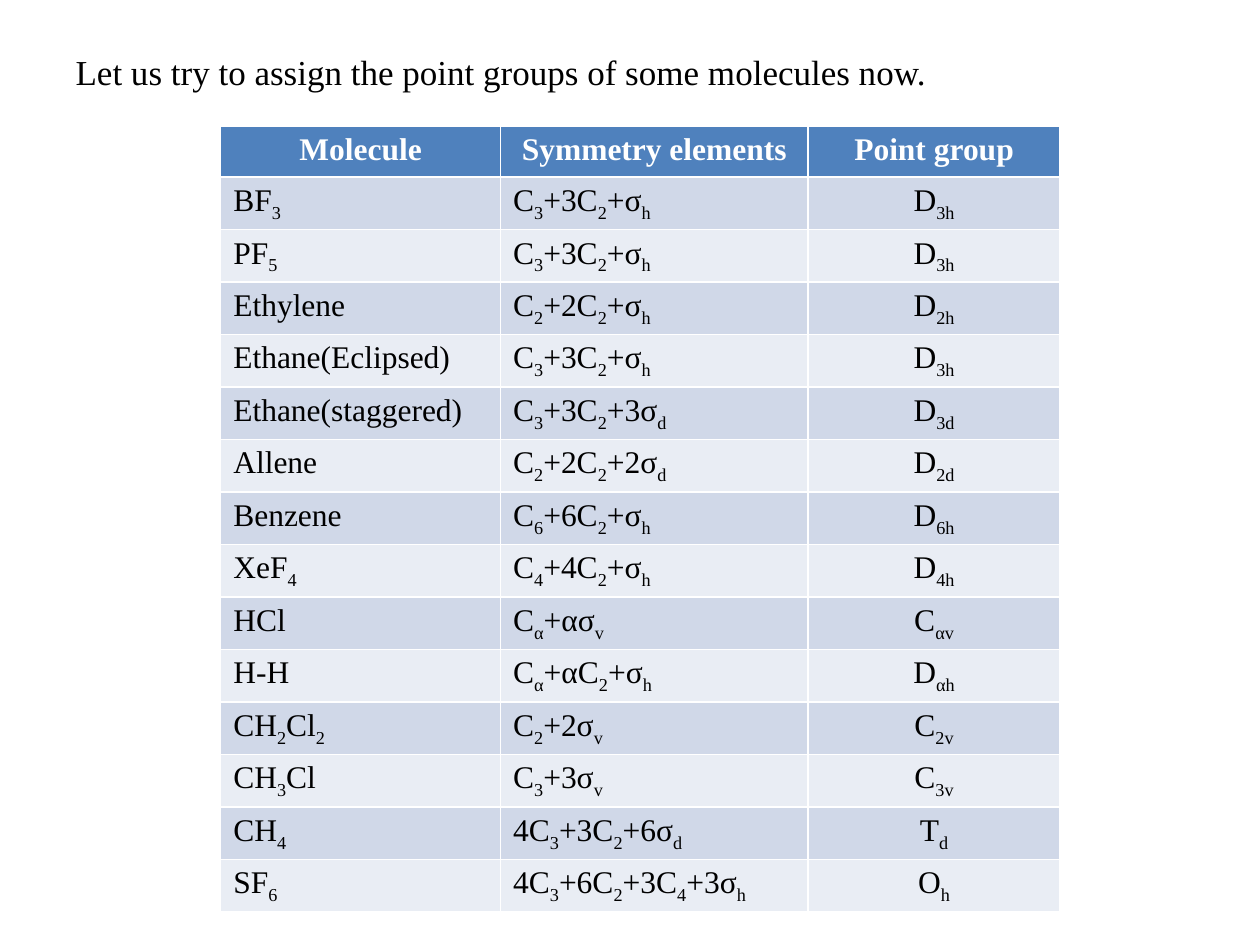
"""Build a slide with a table of molecules and their point groups."""
from pptx import Presentation
from pptx.dml.color import RGBColor
from pptx.enum.text import MSO_ANCHOR, MSO_AUTO_SIZE, PP_ALIGN
from pptx.util import Cm, Pt

LEFT, CENTER = PP_ALIGN.LEFT, PP_ALIGN.CENTER
MIDDLE = MSO_ANCHOR.MIDDLE
NO_FIT = MSO_AUTO_SIZE.NONE
TITLE_ONLY = 5

HEADERS = ["Molecule", "Symmetry elements", "Point group"]
MOLECULES = [
    ("BF_3", "C_3_+3C_2_+σ_h", "D_3h"),
    ("PF_5", "C_3_+3C_2_+σ_h", "D_3h"),
    ("Ethylene", "C_2_+2C_2_+σ_h", "D_2h"),
    ("Ethane(Eclipsed)", "C_3_+3C_2_+σ_h", "D_3h"),
    ("Ethane(staggered)", "C_3_+3C_2_+3σ_d", "D_3d"),
    ("Allene", "C_2_+2C_2_+2σ_d", "D_2d"),
    ("Benzene", "C_6_+6C_2_+σ_h", "D_6h"),
    ("XeF_4", "C_4_+4C_2_+σ_h", "D_4h"),
    ("HCl", "C_α_+ασ_v", "C_αv"),
    ("H-H", "C_α_+αC_2_+σ_h", "D_αh"),
    ("CH_2_Cl_2", "C_2_+2σ_v", "C_2v"),
    ("CH_3_Cl", "C_3_+3σ_v", "C_3v"),
    ("CH_4", "4C_3_+3C_2_+6σ_d", "T_d"),
    ("SF_6", "4C_3_+6C_2_+3C_4_+3σ_h", "O_h"),
]


def rgb(color):
    return RGBColor.from_string(color)


class Deck:
    font = "Times New Roman"
    text, header_text = "000000", "FFFFFF"
    header_fill = "4F81BD"
    bands = ("E9EDF4", "D0D8E8")

    def __init__(self, prs):
        self.s = prs.slides.add_slide(prs.slide_layouts[TITLE_ONLY])

    def style(self, r, size, color, bold=False):
        r.font.name = self.font
        r.font.size = Pt(size)
        r.font.bold = bold
        r.font.color.rgb = rgb(color)

    def title(self, text, left, top, width, height):
        sp = self.s.shapes.title
        sp.left, sp.top, sp.width, sp.height = left, top, width, height
        tf = sp.text_frame
        tf.text = text
        tf.auto_size = NO_FIT
        tf.vertical_anchor = MIDDLE
        p = tf.paragraphs[0]
        p.alignment = LEFT
        self.style(p.runs[0], 20, self.text)

    def cell(self, cell, formula, fill, color, align, bold):
        cell.fill.solid()
        cell.fill.fore_color.rgb = rgb(fill)
        p = cell.text_frame.paragraphs[0]
        p.alignment = align
        for i, part in enumerate(formula.split("_")):
            r = p.add_run()
            r.text = part
            self.style(r, 18, color, bold)
            if i % 2:
                r.font._element.set("baseline", "-25000")

    def table(self, rows, left, top, widths, row_height, height):
        frame = self.s.shapes.add_table(
            len(rows), len(widths), left, top, sum(widths), height)
        table = frame.table
        for column, width in zip(table.columns, widths):
            column.width = width
        for i, values in enumerate(rows):
            table.rows[i].height = row_height
            header = i == 0
            fill = self.header_fill if header else self.bands[i % 2]
            color = self.header_text if header else self.text
            for j, value in enumerate(values):
                align = CENTER if header or j == 2 else LEFT
                self.cell(table.cell(i, j), value, fill, color, align, header)
        frame.height = height


def main():
    prs = Presentation()
    prs.slide_width, prs.slide_height = Cm(25.4), Cm(19.05)
    deck = Deck(prs)
    deck.title("Let us try to assign the point groups of some molecules now.",
               Cm(1.27), Cm(0.76), Cm(22.86), Cm(1.35))
    deck.table([HEADERS] + MOLECULES, Cm(4.45), Cm(2.54),
               [Cm(5.64), Cm(6.2), Cm(5.08)], Cm(1.03), Cm(16.2))
    prs.save("out.pptx")


if __name__ == "__main__":
    main()
